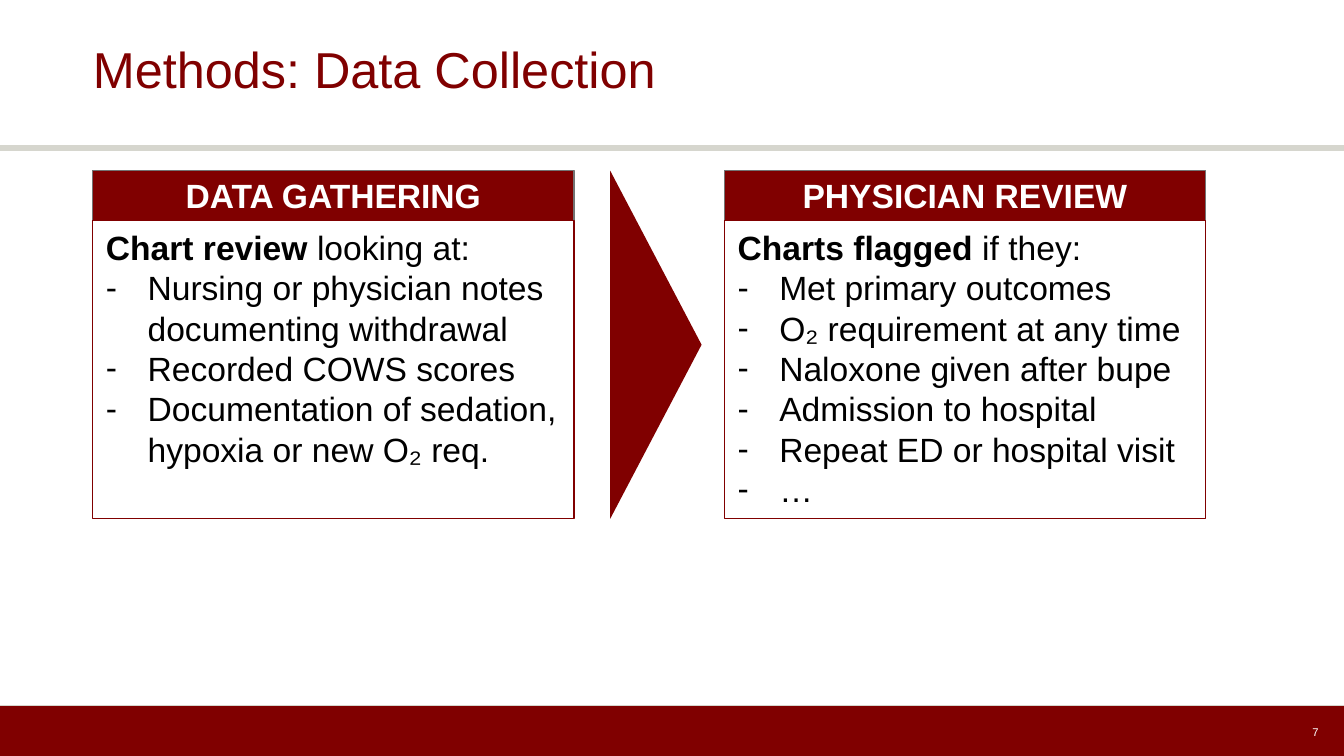
from lxml import etree
from pptx import Presentation
from pptx.dml.color import RGBColor
from pptx.enum.shapes import MSO_CONNECTOR, MSO_SHAPE
from pptx.enum.text import MSO_ANCHOR, PP_ALIGN
from pptx.oxml.ns import qn
from pptx.util import Inches, Pt

RECT, TRI = MSO_SHAPE.RECTANGLE, MSO_SHAPE.ISOSCELES_TRIANGLE
TOP, MID = MSO_ANCHOR.TOP, MSO_ANCHOR.MIDDLE
LEFT, MIDST, RIGHT = PP_ALIGN.LEFT, PP_ALIGN.CENTER, PP_ALIGN.RIGHT

# Content
TITLE = "Methods: Data Collection"
PAGE = "7"
CARDS = [
    ("DATA GATHERING", "Chart review ", "looking at:", [
        "Nursing or physician notes documenting withdrawal",
        "Recorded COWS scores",
        "Documentation of sedation, hypoxia or new O₂ req."]),
    ("PHYSICIAN REVIEW", "Charts flagged ", "if they:", [
        "Met primary outcomes",
        "O₂ requirement at any time",
        "Naloxone given after bupe",
        "Admission to hospital",
        "Repeat ED or hospital visit",
        "…"]),
]
HUE = {"red": "800000", "rule": "D6D6CE", "edge": "737373",
       "ink": "000000", "white": "FFFFFF"}
FONT = "Arial"

# Grid, in inches, on a 16:9 slide
WIDE = 10
HIGH = WIDE * 9 / 16
EDGE, STEP = 0.69, 4.7
CARD, HEAD, BODY = 3.58, 0.37, 2.22
ROW = 1.27
FOOT = 5.25
TIP = 0.68
INDENT = 0.31

deck = Presentation()
deck.slide_width, deck.slide_height = Inches(WIDE), Inches(HIGH)
slide = deck.slides.add_slide(deck.slide_layouts[6])


def tint(name):
    return RGBColor.from_string(HUE[name])


def rule(y, weight):
    line = slide.shapes.add_connector(
        MSO_CONNECTOR.STRAIGHT, 0, Inches(y), Inches(WIDE), Inches(y))
    line.line.color.rgb = tint("rule")
    line.line.width = Pt(weight)
    etree.SubElement(line._element.spPr, qn("a:effectLst"))


def block(kind, box, fill=None, edge=None):
    shape = slide.shapes.add_shape(kind, *map(Inches, box))
    shape.shadow.inherit = False
    if fill:
        shape.fill.solid()
        shape.fill.fore_color.rgb = tint(fill)
    else:
        shape.fill.background()
    if edge:
        shape.line.color.rgb = tint(edge)
        shape.line.width = Pt(0.75)
    else:
        shape.line.fill.background()
    return shape


def frame(shape, anchor, side, end):
    text = shape.text_frame
    text.word_wrap = True
    text.vertical_anchor = anchor
    text.margin_left = text.margin_right = Inches(side)
    text.margin_top = text.margin_bottom = Inches(end)
    return text


def style(para, size, color, align=LEFT, bold=None):
    para.alignment = align
    font = para.font
    font.name, font.size, font.bold = FONT, Pt(size), bold
    font.color.rgb = tint(color)


def label(box, words, side, size, color, align):
    text = frame(slide.shapes.add_textbox(*map(Inches, box)), MID, side, 0.04)
    para = text.paragraphs[0]
    para.text = words
    style(para, size, color, align)
    return para


def dash(para):
    props = para._p.get_or_add_pPr()
    props.set("marL", str(Inches(INDENT)))
    props.set("indent", str(-Inches(INDENT)))
    etree.SubElement(props, qn("a:buFont"), typeface=FONT)
    etree.SubElement(props, qn("a:buChar"), char="-")


# Title and bands
rule(1.1, 3)
block(RECT, (0, FOOT, WIDE, HIGH - FOOT), "red")
rule(FOOT, 0.75)
label((EDGE, 0, 8.62, 1.08), TITLE, 0, 27, "red", LEFT).line_spacing = 0.9
label((7.06, 5.3, 2.82, 0.3), PAGE, 0.07, 6, "white", RIGHT)

# Cards
for col, (name, lead, rest, items) in enumerate(CARDS):
    x = EDGE + col * STEP
    head = block(RECT, (x, ROW, CARD, HEAD), "red", "edge")
    para = frame(head, MID, 0.1, 0.1).paragraphs[0]
    para.text = name
    style(para, 18, "white", MIDST, True)

    body = block(RECT, (x, ROW + HEAD, CARD, BODY), edge="red")
    text = frame(body, TOP, 0.1, 0.05)
    para = text.paragraphs[0]
    for words, bold in ((lead, True), (rest, False)):
        run = para.add_run()
        run.text, run.font.bold = words, bold
    style(para, 18, "ink")
    for item in items:
        para = text.add_paragraph()
        para.text = item
        dash(para)
        style(para, 18, "ink")

# Arrow between the cards, turned to point right
span = HEAD + BODY
mid = 4.88
arrow = block(TRI, (mid - span / 2, ROW + span / 2 - TIP / 2, span, TIP), "red")
arrow.rotation = 90

deck.save("out.pptx")
